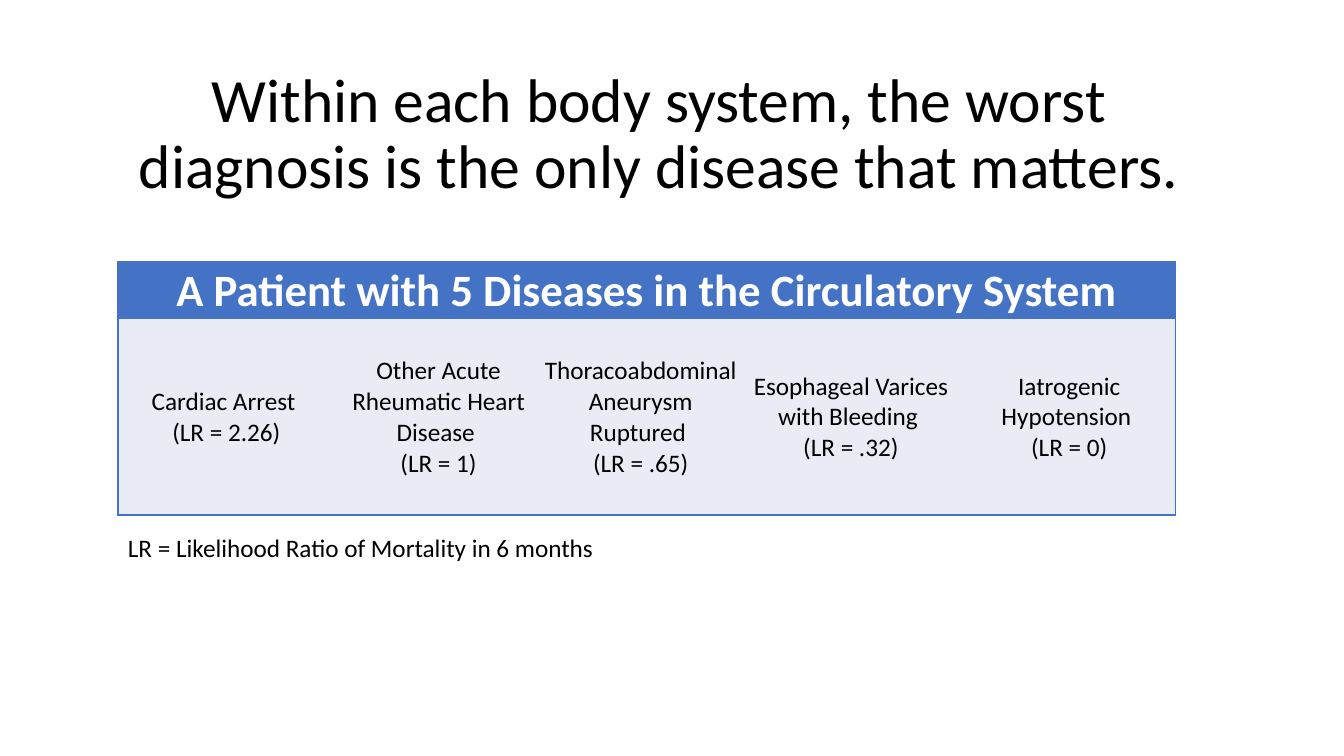
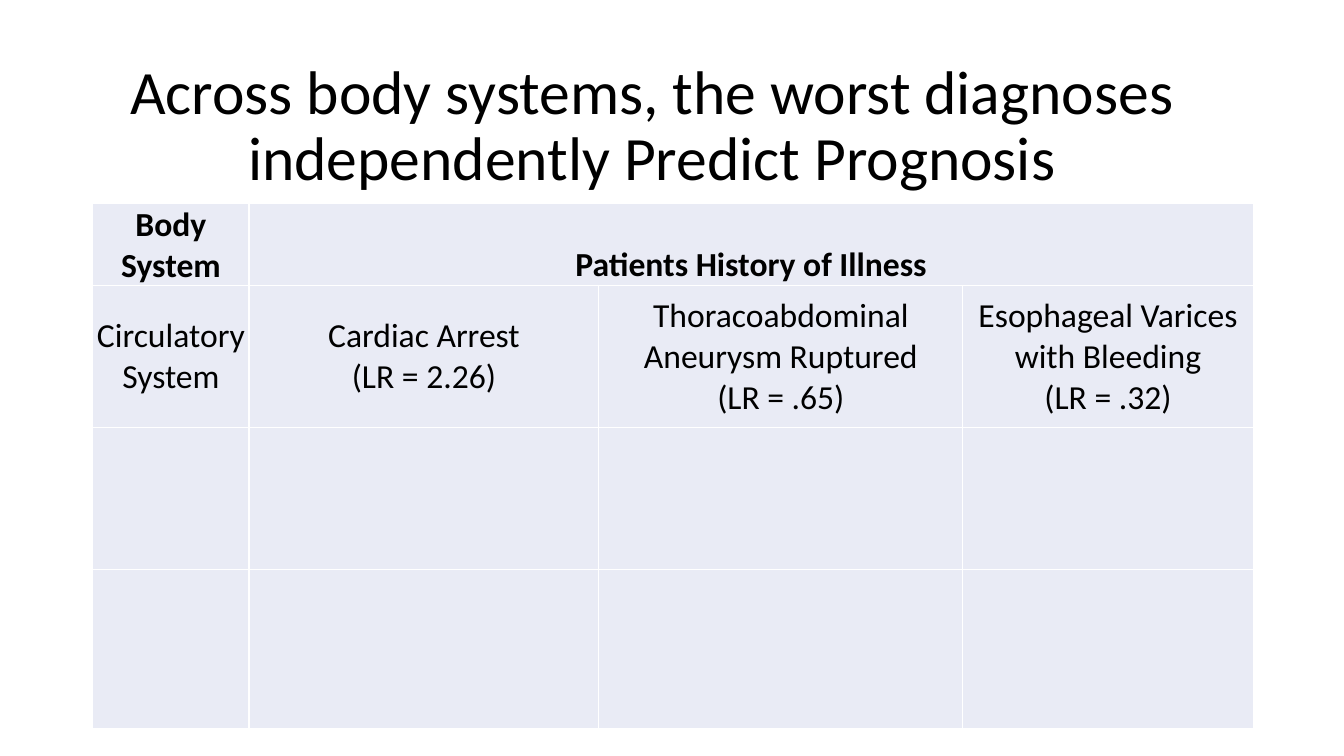
"""Build two slides on how the worst diagnosis in each body system predicts prognosis."""
from lxml.etree import SubElement
from pptx import Presentation
from pptx.dml.color import RGBColor
from pptx.enum.text import MSO_ANCHOR as Anchor, PP_ALIGN as Align
from pptx.oxml import parse_xml
from pptx.oxml.ns import nsdecls, qn
from pptx.util import Inches, Pt

BLACK = RGBColor(0x00, 0x00, 0x00)
WHITE = RGBColor(0xFF, 0xFF, 0xFF)
BLUE = RGBColor(0x44, 0x72, 0xC4)
PALE = RGBColor(0xE9, 0xEB, 0xF5)
FONT = "Calibri"
NO_STYLE = "{2D5ABB26-0587-4C30-8999-92F81FD0307C}"


def add_text(slide, text, box, size, align=Align.LEFT, wrap=True):
    frame = slide.shapes.add_textbox(*map(Inches, box)).text_frame
    frame.word_wrap = wrap
    frame.vertical_anchor = Anchor.MIDDLE if wrap else Anchor.TOP
    paragraph = frame.paragraphs[0]
    paragraph.text = text
    paragraph.alignment = align
    paragraph.font.name = FONT
    paragraph.font.size = Pt(size)
    paragraph.font.color.rgb = BLACK
    return paragraph


def style_cell(cell, size, color, fill, bold, anchor, border, sides):
    cell.fill.solid()
    cell.fill.fore_color.rgb = fill
    cell.vertical_anchor = anchor
    cell.margin_left = cell.margin_right = cell.margin_top = Inches(0.01)
    cell.margin_bottom = 0
    for paragraph in cell.text_frame.paragraphs:
        paragraph.alignment = Align.CENTER
        paragraph.font.name = FONT
        paragraph.font.size = Pt(size)
        paragraph.font.bold = bold
        paragraph.font.color.rgb = color
    properties = cell._tc.get_or_add_tcPr()
    for position, side in enumerate(side for side in "LRTB" if side in sides):
        line = parse_xml(f'<a:ln{side} {nsdecls("a")} w="{Pt(1)}"/>')
        line_fill = SubElement(line, qn("a:solidFill"))
        SubElement(line_fill, qn("a:srgbClr"), val=str(border))
        properties.insert(position, line)


presentation = Presentation()
presentation.slide_width = Inches(13.33)
presentation.slide_height = Inches(7.5)

SLIDES = [
    {
        "title": "Within each body system, the worst diagnosis is the only disease that matters.",
        "title_at": (0.79, 0.62),
        "table_at": (1.17, 2.6),
        "columns": [2.15, 2.06, 1.95, 2.22, 2.11],
        "rows": [0.56, 1.95],
        "merge": (0, 4),
        "header": (32, WHITE, BLUE),
        "body_size": 18,
        "border": BLUE,
        "inner_borders": False,
        "cells": [
            ["A Patient with 5 Diseases in the Circulatory System"],
            [
                "Cardiac Arrest \n(LR = 2.26)",
                "Other Acute Rheumatic Heart Disease \n(LR = 1)",
                "Thoracoabdominal Aneurysm Ruptured \n(LR = .65)",
                "Esophageal Varices with Bleeding \n(LR = .32)",
                "Iatrogenic Hypotension \n(LR = 0)",
            ],
        ],
        "note": "LR = Likelihood Ratio of Mortality in 6 months",
    },
    {
        "title": "Across body systems, the worst diagnoses independently Predict Prognosis",
        "title_at": (0.72, 0.54),
        "table_at": (0.92, 2.02),
        "columns": [1.55, 3.47, 3.61, 2.88],
        "rows": [0.81, 1.41, 1.41, 1.58],
        "merge": (1, 3),
        "header": (24, BLACK, PALE),
        "body_size": 24,
        "border": WHITE,
        "inner_borders": True,
        "cells": [
            ["Body System", "Patients History of Illness"],
            [
                "Circulatory System",
                "Cardiac Arrest\n(LR = 2.26)",
                "Thoracoabdominal Aneurysm Ruptured\n(LR = .65)",
                "Esophageal Varices with Bleeding\n(LR = .32)",
            ],
        ],
        "note": None,
    },
]

for content in SLIDES:
    slide = presentation.slides.add_slide(presentation.slide_layouts[6])
    title = add_text(slide, content["title"], (*content["title_at"], 11.5, 1.45), 44, Align.CENTER)
    title.line_spacing = 0.9

    columns, rows = content["columns"], content["rows"]
    box = (*content["table_at"], sum(columns), sum(rows))
    table = slide.shapes.add_table(len(rows), len(columns), *map(Inches, box)).table
    table._tbl.tblPr.find(qn("a:tableStyleId")).text = NO_STYLE
    table.first_row = table.horz_banding = False
    for column, width in zip(table.columns, columns):
        column.width = Inches(width)
    for row, height in zip(table.rows, rows):
        row.height = Inches(height)
    first, last = content["merge"]
    table.cell(0, first).merge(table.cell(0, last))
    for row_index, texts in enumerate(content["cells"]):
        for column_index, text in enumerate(texts):
            table.cell(row_index, column_index).text = text

    for row_index in range(len(rows)):
        for column_index in range(len(columns)):
            sides = "LRTB"
            if not content["inner_borders"]:
                sides = "TB"
                sides += "L" if column_index == 0 else ""
                sides += "R" if column_index == len(columns) - 1 else ""
            is_header = row_index == 0
            size, color, fill = content["header"] if is_header else (content["body_size"], BLACK, PALE)
            anchor = Anchor.BOTTOM if is_header else Anchor.MIDDLE
            cell = table.cell(row_index, column_index)
            style_cell(cell, size, color, fill, is_header, anchor, content["border"], sides)

    if content["note"]:
        add_text(slide, content["note"], (1.17, 5.23, 4.87, 0.4), 18, wrap=False)

presentation.save("out.pptx")
